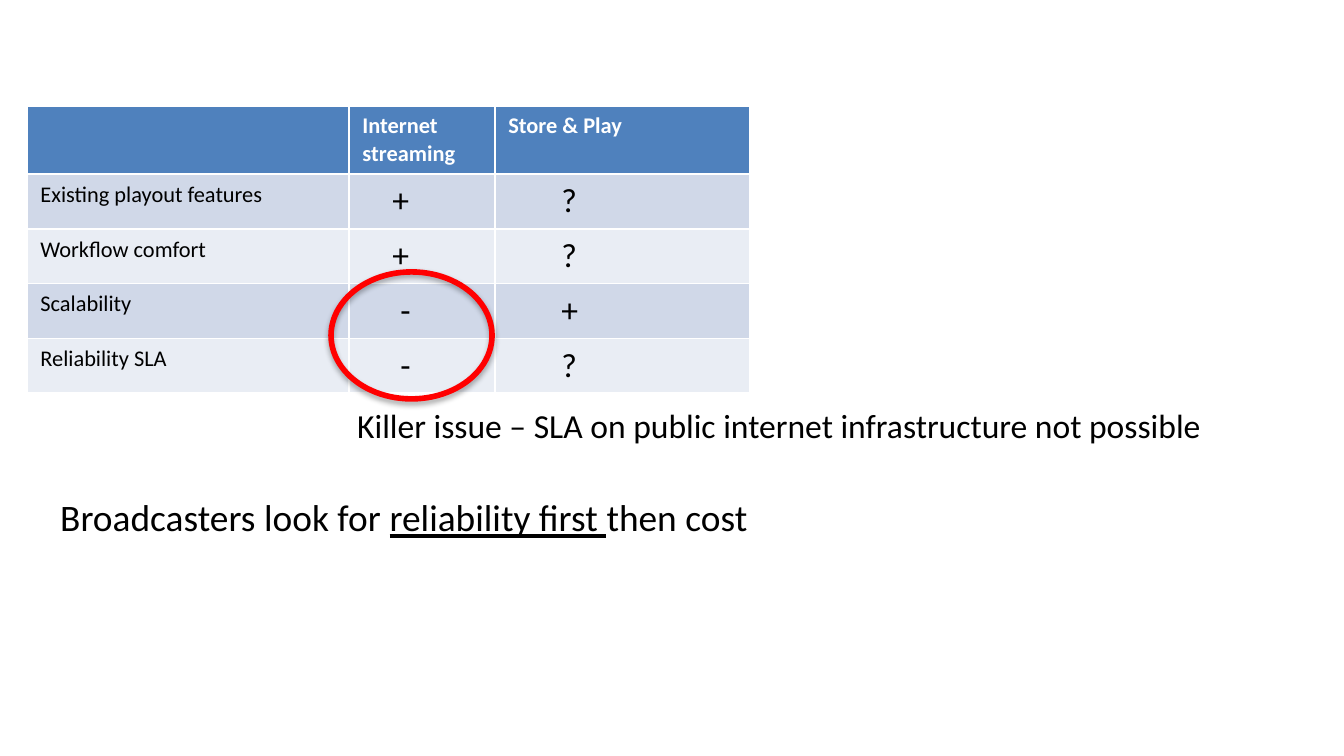
"""Build a slide comparing internet streaming with store and play."""
from lxml import etree
from pptx import Presentation
from pptx.dml.color import RGBColor
from pptx.enum import shapes, text
from pptx.oxml import ns
from pptx.util import Pt

BLACK = RGBColor(0x00, 0x00, 0x00)
WHITE = RGBColor(0xFF, 0xFF, 0xFF)
RED = RGBColor(0xFF, 0x00, 0x00)
HEADER_BLUE = RGBColor(0x4F, 0x81, 0xBD)
BANDS = (RGBColor(0xD0, 0xD8, 0xE8), RGBColor(0xE9, 0xED, 0xF4))

PAGE = (1344, 756)
TABLE_CORNER = (27, 106)
COLUMN_WIDTHS = (322, 146, 255)
ROW_HEIGHTS = (67, 55, 54, 55, 54)
ROWS = (
    ("", "Internet streaming", "Store & Play"),
    ("Existing playout features", "+", "?"),
    ("Workflow comfort", "+", "?"),
    ("Scalability", "-", "+"),
    ("Reliability SLA", "-", "?"),
)
MARK_INDENTS = {(1, "+"): 30, (1, "-"): 38, (2, "+"): 53, (2, "?"): 53}
KILLER_RING = (331, 272, 161, 127)
SHADOW = {"blurRad": Pt(3.1), "dist": Pt(1.8), "dir": 90 * 60000, "rotWithShape": 0}
STATEMENTS = (
    ((344, 398, 883, 54), 18,
     (("Killer issue – SLA on public internet infrastructure not possible", False),)),
    ((47, 488, 726, 59), 20,
     (("Broadcasters look for ", False), ("reliability first ", True), ("then cost", False))),
)


def px(*lengths):
    return [round(length * 9144000 / PAGE[0]) for length in lengths]


def add_span(para, words, color, **formats):
    span = para.add_run()
    span.text = words
    span.font.color.rgb = color
    for name, value in {"name": "Calibri", **formats}.items():
        setattr(span.font, name, value)


def add_comparison(page):
    size = px(sum(COLUMN_WIDTHS), sum(ROW_HEIGHTS))
    frame = page.shapes.add_table(len(ROWS), len(COLUMN_WIDTHS), *px(*TABLE_CORNER), *size)
    table = frame.table
    for column, width in zip(table.columns, px(*COLUMN_WIDTHS)):
        column.width = width
    for row, height in zip(table.rows, px(*ROW_HEIGHTS)):
        row.height = height
    for r, labels in enumerate(ROWS):
        header = r == 0
        for c, words in enumerate(labels):
            cell = table.cell(r, c)
            cell.fill.solid()
            cell.fill.fore_color.rgb = HEADER_BLUE if header else BANDS[(r - 1) % 2]
            if not words:
                continue
            para = cell.text_frame.paragraphs[0]
            indent = MARK_INDENTS.get((c, words))
            if indent:
                para._p.get_or_add_pPr().set("marL", str(px(indent)[0]))
            add_span(para, words, WHITE if header else BLACK,
                     size=Pt(18 if indent else 12), bold=header)


def add_ring(page):
    ring = page.shapes.add_shape(shapes.MSO_SHAPE.OVAL, *px(*KILLER_RING))
    ring.fill.background()
    ring.line.color.rgb = RED
    ring.line.width = Pt(3)
    ring.shadow.inherit = False
    effects = ring._element.spPr.find(ns.qn("a:effectLst"))
    shadow = etree.SubElement(effects, ns.qn("a:outerShdw"),
                              {name: str(value) for name, value in SHADOW.items()})
    color = etree.SubElement(shadow, ns.qn("a:srgbClr"), val=str(BLACK))
    etree.SubElement(color, ns.qn("a:alpha"), val="35000")


def add_statement(page, place, size, spans):
    box = page.shapes.add_textbox(*px(*place))
    box.text_frame.word_wrap = False
    box.text_frame.auto_size = text.MSO_AUTO_SIZE.SHAPE_TO_FIT_TEXT
    for words, underline in spans:
        add_span(box.text_frame.paragraphs[0], words, BLACK, size=Pt(size), underline=underline)


def main():
    deck = Presentation()
    deck.slide_width, deck.slide_height = px(*PAGE)
    page = deck.slides.add_slide(deck.slide_layouts[6])
    add_comparison(page)
    add_ring(page)
    for statement in STATEMENTS:
        add_statement(page, *statement)
    deck.save("out.pptx")


if __name__ == "__main__":
    main()
